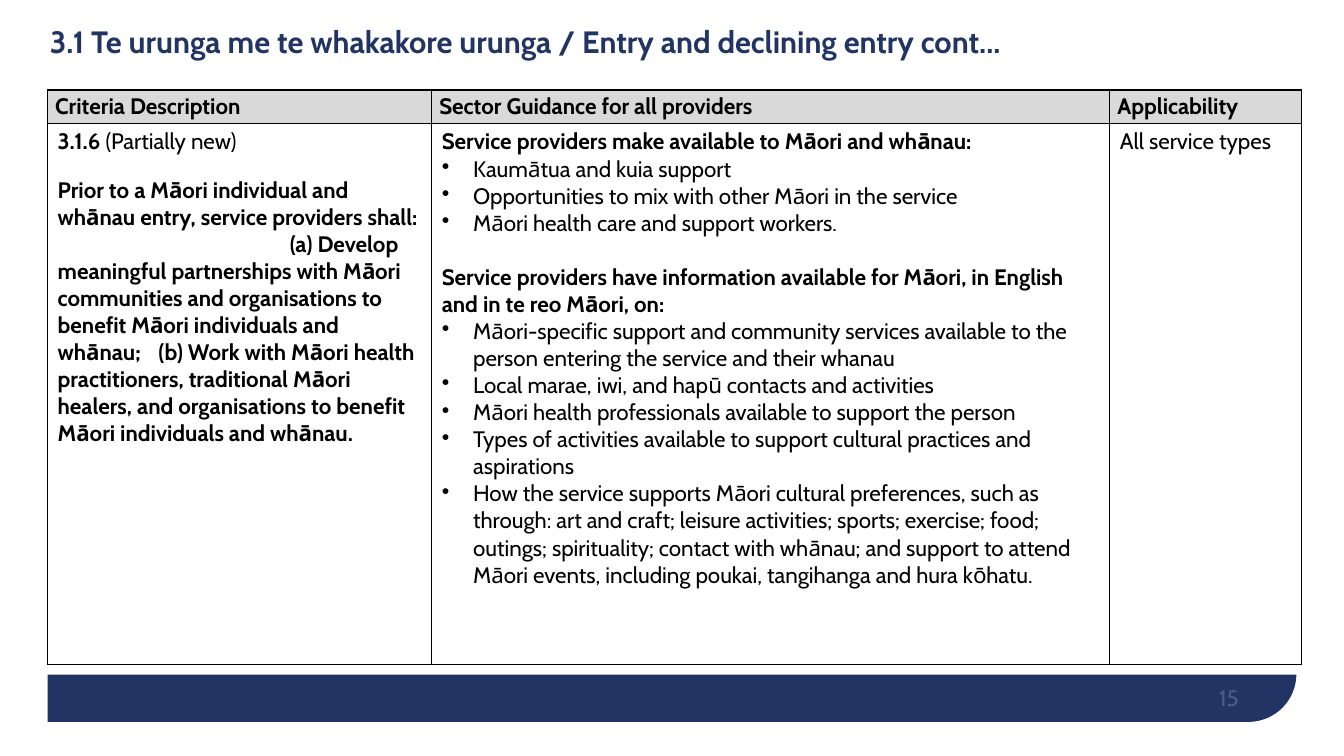
import pptx
import pptx.util
import pptx.dml.color
import pptx.enum.shapes
import pptx.enum.text
import pptx.oxml
import pptx.oxml.ns
from lxml import etree

Cm, Pt = pptx.util.Cm, pptx.util.Pt
ALIGN, ANCHOR = pptx.enum.text.PP_ALIGN, pptx.enum.text.MSO_ANCHOR
SHAPE = pptx.enum.shapes.MSO_SHAPE

FONT = "Cabin"
NAVY, WHITE, BLACK, GREY = "213463", "FFFFFF", "000000", "D9D9D9"

TITLE = "3.1 Te urunga me te whakakore urunga / Entry and declining entry cont..."
PAGE = "15"
HEADS = ["Criteria Description", "Sector Guidance for all providers", "Applicability"]
WIDTHS = [9.68, 17.09, 4.83]
HEIGHTS = [0.84, 13.64]

# Each line: style, text, space before in points
CRITERIA = [
    ("code", ("3.1.6 ", "(Partially new)"), 0),
    ("bold", "Prior to a Māori individual and whānau entry, service providers shall:", 15),
    ("clause", "(a) Develop meaningful partnerships with Māori communities and "
     "organisations to benefit Māori individuals and whānau;\t(b) Work with Māori "
     "health practitioners, traditional Māori healers, and organisations to benefit "
     "Māori individuals and whānau.", 0),
]
GUIDANCE = [
    ("bold", "Service providers make available to Māori and whānau:", 0),
    ("bullet", "Kaumātua and kuia support", 0),
    ("bullet", "Opportunities to mix with other Māori in the service", 0),
    ("bullet", "Māori health care and support workers.", 0),
    ("bold", "Service providers have information available for Māori, in English "
     "and in te reo Māori, on:", 19.4),
    ("bullet", "Māori-specific support and community services available to the person "
     "entering the service and their whanau", 0),
    ("bullet", "Local marae, iwi, and hapū contacts and activities", 0),
    ("bullet", "Māori health professionals available to support the person", 0),
    ("bullet", "Types of activities available to support cultural practices and "
     "aspirations", 0),
    ("bullet", "How the service supports Māori cultural preferences, such as through: "
     "art and craft; leisure activities; sports; exercise; food; outings; "
     "spirituality; contact with whānau; and support to attend Māori events, "
     "including poukai, tangihanga and hura kōhatu.", 0),
]
SCOPE = [("plain", "All service types", 0)]


def color(code):
    return pptx.dml.color.RGBColor.from_string(code)


def style(font, size, code, bold=False):
    font.name, font.size, font.bold = FONT, Pt(size), bold
    font.color.rgb = color(code)


def node(xml):
    return pptx.oxml.parse_xml(xml.replace(">", f" {pptx.oxml.ns.nsdecls('a')}>", 1))


def block(shapes, kind, box, code):
    shape = shapes.add_shape(kind, *[Cm(v) for v in box])
    shape.shadow.inherit = False
    shape.fill.solid()
    shape.fill.fore_color.rgb = color(code)
    shape.line.fill.background()
    return shape


def border(cell):
    props = cell._tc.get_or_add_tcPr()
    for side in "LRTB":
        props.append(node(
            f'<a:ln{side} w="12700"><a:solidFill><a:srgbClr val="{BLACK}"/>'
            f'</a:solidFill></a:ln{side}>'))


def write(cell, lines):
    frame = cell.text_frame
    for i, (kind, text, gap) in enumerate(lines):
        para = frame.add_paragraph() if i else frame.paragraphs[0]
        if gap:
            para.space_before = Pt(gap)
        if kind == "code":
            for part, bold in zip(text, (True, False)):
                run = para.add_run()
                run.text = part
                style(run.font, 16, BLACK, bold)
            continue
        para.add_run().text = text
        props = para._p.get_or_add_pPr()
        if kind == "bullet":
            props.set("marL", str(Cm(0.79)))
            props.set("indent", str(-Cm(0.79)))
            props.append(node('<a:buChar char="•"></a:buChar>'))
        elif kind == "clause":
            props.set("marL", "0")
            props.set("indent", str(Cm(5.85)))
            props.append(node(
                f'<a:tabLst><a:tab pos="{Cm(7.35)}" algn="l"/></a:tabLst>'))
        style(para.font, 16, BLACK, kind in ("bold", "clause"))


def build():
    deck = pptx.Presentation()
    deck.slide_width, deck.slide_height = Cm(33.87), Cm(19.05)
    slide = deck.slides.add_slide(deck.slide_layouts[5])
    shapes = slide.shapes

    band = block(shapes, SHAPE.ROUND_1_RECTANGLE, (1.2, 0.94, 31.47, 17.25), NAVY)
    band.adjustments[0] = 0.07
    band.rotation = 180
    band._element.spPr.xfrm.set("flipH", "1")
    block(shapes, SHAPE.RECTANGLE, (0, 0, 33.87, 17), WHITE)

    title = shapes.title
    shapes._spTree.append(title._element)
    title.left, title.top, title.width, title.height = [
        Cm(v) for v in (1, 0.38, 29.2, 1.45)]
    frame = title.text_frame
    frame.text = TITLE
    frame.auto_size = pptx.enum.text.MSO_AUTO_SIZE.NONE
    frame.vertical_anchor = ANCHOR.MIDDLE
    para = frame.paragraphs[0]
    para.alignment, para.line_spacing = ALIGN.LEFT, 0.9
    style(para.font, 22, NAVY, True)

    page = shapes.add_textbox(Cm(23.6), Cm(16.9), Cm(7.62), Cm(1.02)).text_frame
    page.word_wrap = True
    page.margin_left = page.margin_right = page.margin_top = page.margin_bottom = 0
    page.vertical_anchor = ANCHOR.BOTTOM
    page.text = PAGE
    para = page.paragraphs[0]
    para.alignment = ALIGN.RIGHT
    style(para.font, 16, WHITE)
    tint = para._p.find(".//" + pptx.oxml.ns.qn("a:srgbClr"))
    etree.SubElement(tint, pptx.oxml.ns.qn("a:alpha"), val="20000")

    table = shapes.add_table(2, 3, Cm(1.2), Cm(2.27), Cm(sum(WIDTHS)),
                             Cm(sum(HEIGHTS))).table
    table.horz_banding = False
    for row, height in zip(table.rows, HEIGHTS):
        row.height = Cm(height)
    for i, (width, head, body) in enumerate(
            zip(WIDTHS, HEADS, (CRITERIA, GUIDANCE, SCOPE))):
        table.columns[i].width = Cm(width)
        top, cell = table.cell(0, i), table.cell(1, i)
        border(top)
        border(cell)
        top.fill.solid()
        top.fill.fore_color.rgb = color(GREY)
        cell.fill.background()
        top.vertical_anchor = ANCHOR.MIDDLE
        top.margin_left = top.margin_right = Cm(0.19)
        top.margin_top = top.margin_bottom = 0
        write(top, [("bold", head, 0)])
        write(cell, body)

    deck.save("out.pptx")


if __name__ == "__main__":
    build()
